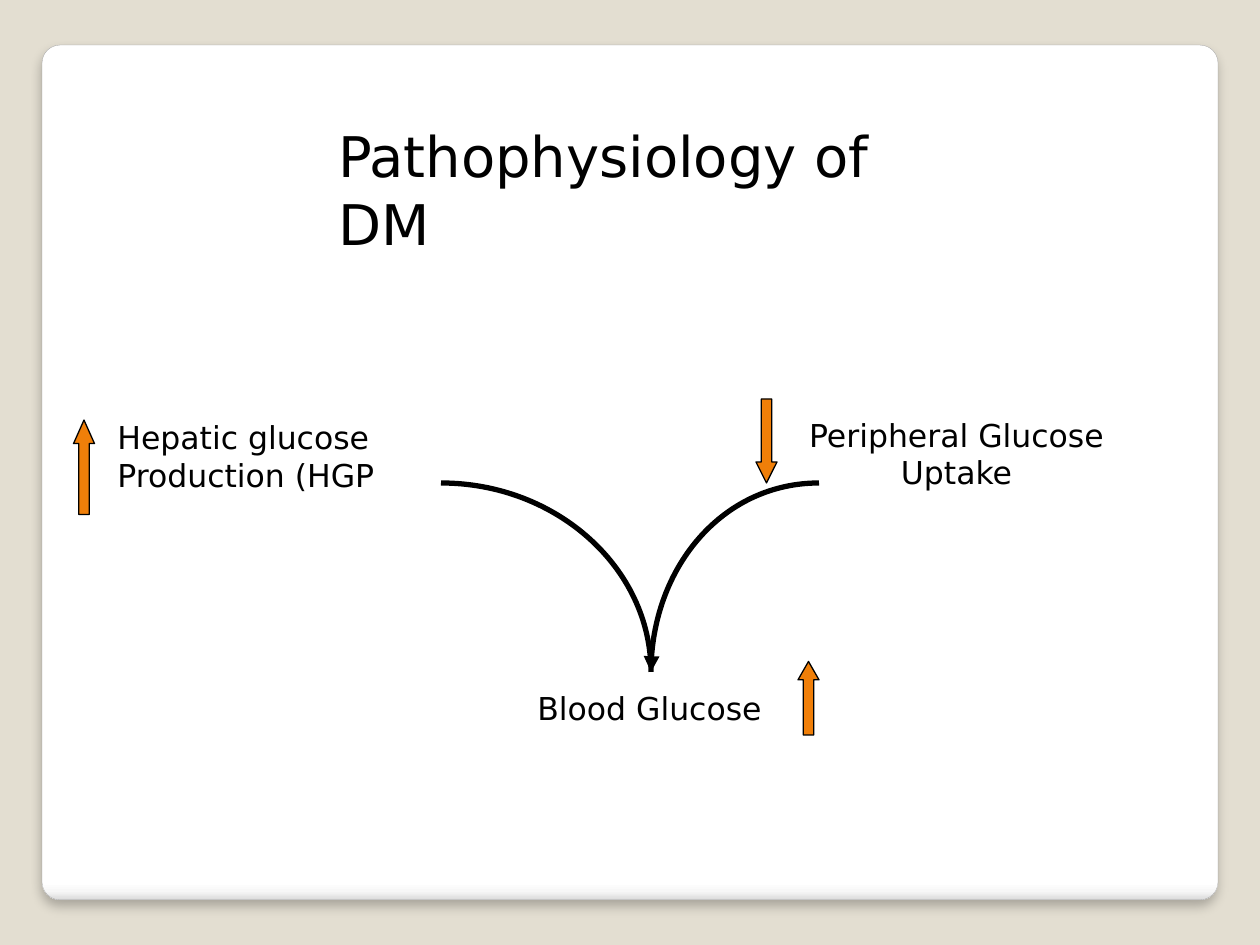
from pptx import Presentation
from pptx.dml.color import RGBColor
from pptx.enum.shapes import MSO_SHAPE
from pptx.enum.text import MSO_ANCHOR, MSO_AUTO_SIZE, PP_ALIGN
from pptx.oxml import parse_xml
from pptx.oxml.ns import nsdecls
from pptx.util import Inches, Pt
from lxml.etree import SubElement

W, H = 10, 7.5
COL, ROW = W / 60, H / 90
FONT = "DejaVu Sans"
BLACK, ORANGE, SAND = "000000", "F07F09", "E3DED1"
LEFT, CENTER = PP_ALIGN.LEFT, PP_ALIGN.CENTER
UP, DOWN = MSO_SHAPE.UP_ARROW, MSO_SHAPE.DOWN_ARROW

TITLE = ("Pathophysiology of DM", (15.5, 11, 27, 7.5))
LABELS = [
    (["Hepatic glucose", "Production (HGP"], (5, 39.25, 15.2, 10.8), LEFT),
    (["Peripheral Glucose", "Uptake"], (37.3, 39, 16.5, 10.8), CENTER),
    (["Blood Glucose"], (25, 65, 13.2, 6), LEFT),
]
ARROWS = [(UP, (3.5, 40, 1, 9)), (UP, (38, 63, 1, 7)), (DOWN, (36, 38, 1, 8))]
MEETING = (31, 64)
CURVES = [((21, 46), False), ((39, 46), True)]
CARD = (2, 4.3, 56, 81.4)
CARD_STOPS = [(0, "FFFFFF"), (98, "FFFFFF"), (99, "F7F7F7"), (100, "DADADA")]
BEND = 0.55


def rgb(value):
    return RGBColor.from_string(value)


def grid(x, y):
    return Inches(x * COL), Inches(y * ROW)


def box(cells):
    return grid(*cells[:2]) + grid(*cells[2:])


def set_line(sp, color, width):
    sp.line.color.rgb = rgb(color)
    sp.line.width = Pt(width)


def write(tf, lines, size, align):
    tf.word_wrap = True
    tf.auto_size = MSO_AUTO_SIZE.NONE
    tf.vertical_anchor = MSO_ANCHOR.TOP
    for i, text in enumerate(lines):
        p = tf.add_paragraph() if i else tf.paragraphs[0]
        p.alignment = align
        r = p.add_run()
        r.text = text
        r.font.name, r.font.size = FONT, Pt(size)
        r.font.color.rgb = rgb(BLACK)


def add_card(s):
    sp = s.shapes.add_shape(MSO_SHAPE.ROUNDED_RECTANGLE, *box(CARD))
    sp.adjustments[0] = 0.021
    set_line(sp, "A4A4A4", 0.16)
    stops = "".join(
        f'<a:gs pos="{pos * 1000}"><a:srgbClr val="{c}"/></a:gs>' for pos, c in CARD_STOPS)
    ln = sp.line._get_or_add_ln()
    ln.addprevious(parse_xml(
        f'<a:gradFill {nsdecls("a")} rotWithShape="1"><a:gsLst>{stops}</a:gsLst>'
        '<a:lin ang="5400000" scaled="0"/></a:gradFill>'))
    ln.addnext(parse_xml(
        f'<a:effectLst {nsdecls("a")}><a:outerShdw blurRad="{Pt(6)}" dist="{Pt(4)}" '
        'dir="5400000" algn="t" rotWithShape="0"><a:srgbClr val="000000">'
        '<a:alpha val="25000"/></a:srgbClr></a:outerShdw></a:effectLst>'))


def add_arrow(s, kind, cells):
    sp = s.shapes.add_shape(kind, *box(cells))
    sp.shadow.inherit = False
    sp.adjustments[0] = 0.5
    sp.adjustments[1] = cells[3] / 8
    sp.fill.solid()
    sp.fill.fore_color.rgb = rgb(ORANGE)
    set_line(sp, BLACK, 0.75)


def add_curve(s, start, head):
    fb = s.shapes.build_freeform(*grid(*start))
    fb.add_line_segments([grid(*MEETING)], close=False)
    sp = fb.convert_to_shape()
    sp.shadow.inherit = False
    sp.fill.background()
    set_line(sp, BLACK, 3)
    w, h = sp.width, sp.height
    x0, x1 = (0, w) if start[0] < MEETING[0] else (w, 0)
    points = [(x0 + BEND * (x1 - x0), 0), (x1, (1 - BEND) * h), (x1, h)]
    pts = "".join(f'<a:pt x="{round(x)}" y="{round(y)}"/>' for x, y in points)
    segment = sp._element.xpath(".//a:lnTo")[0]
    segment.getparent().replace(
        segment, parse_xml(f'<a:cubicBezTo {nsdecls("a")}>{pts}</a:cubicBezTo>'))
    if head:
        ln = sp.line._get_or_add_ln()
        SubElement(ln, ln.tag.replace("}ln", "}tailEnd"), type="triangle")


def main():
    prs = Presentation()
    prs.slide_width, prs.slide_height = Inches(W), Inches(H)
    s = prs.slides.add_slide(prs.slide_layouts[5])
    s.background.fill.solid()
    s.background.fill.fore_color.rgb = rgb(SAND)
    add_card(s)

    title = s.shapes.title
    text, cells = TITLE
    title.left, title.top, title.width, title.height = box(cells)
    write(title.text_frame, [text], 32, LEFT)
    s.shapes._spTree.append(title._element)

    for lines, cells, align in LABELS:
        write(s.shapes.add_textbox(*box(cells)).text_frame, lines, 18, align)
    for kind, cells in ARROWS:
        add_arrow(s, kind, cells)
    for start, head in CURVES:
        add_curve(s, start, head)
    prs.save("out.pptx")


if __name__ == "__main__":
    main()
